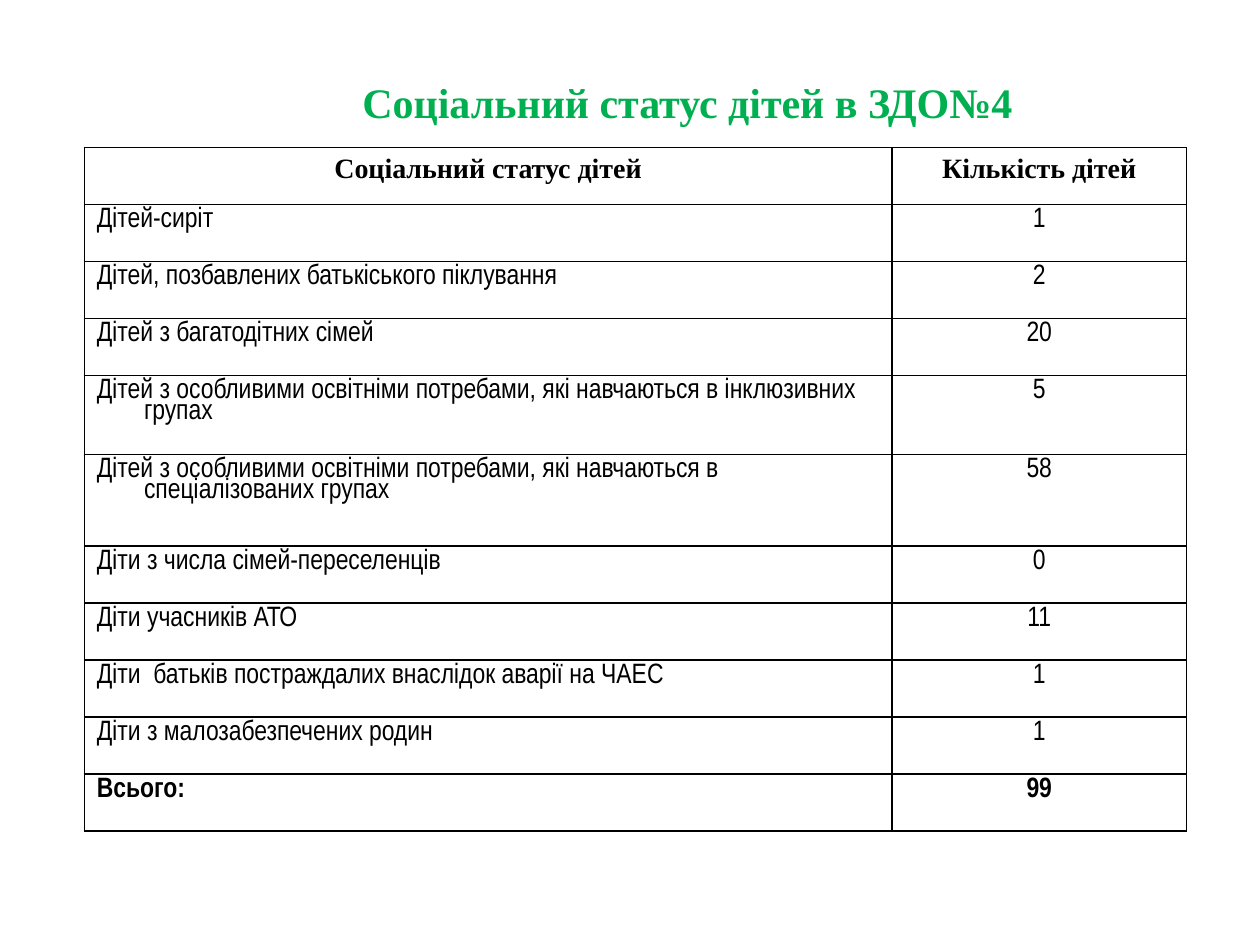
from dataclasses import dataclass

from lxml import etree
from pptx import Presentation
from pptx.dml.color import RGBColor
from pptx.enum.text import MSO_ANCHOR, PP_ALIGN
from pptx.oxml.ns import qn
from pptx.util import Cm, Pt

CENTER, LEFT = PP_ALIGN.CENTER, PP_ALIGN.LEFT
MIDDLE = MSO_ANCHOR.MIDDLE

TITLE = "Соціальний статус дітей в ЗДО№4"
HEADER = ("Соціальний статус дітей", "Кількість дітей")
GROUPS = [
    ("Дітей-сиріт", 1),
    ("Дітей, позбавлених батькіського піклування", 2),
    ("Дітей з багатодітних сімей", 20),
    ("Дітей з особливими освітніми потребами, які навчаються в інклюзивних групах", 5),
    ("Дітей з особливими освітніми потребами, які навчаються в спеціалізованих групах", 58),
    ("Діти з числа сімей-переселенців", 0),
    ("Діти учасників АТО", 11),
    ("Діти  батьків постраждалих внаслідок аварії на ЧАЕС", 1),
    ("Діти з малозабезпечених родин", 1),
]
TOTAL = ("Всього:", sum(count for _, count in GROUPS))

COLUMN_WIDTHS = (16.28, 5.94)
ROW_HEIGHT = 1.15
TALL_ROWS = {4: 1.6, 5: 1.84}
HANGING_INDENT = 0.95


@dataclass(frozen=True)
class Theme:
    heading_font: str = "Times New Roman"
    body_font: str = "Arial Narrow"
    title_size: int = 24
    table_size: int = 16
    title_color: str = "00B050"
    ink: str = "000000"
    paper: str = "FFFFFF"
    body_spacing: float = 0.8


THEME = Theme()


def add_span(para, text, font, size, color, bold):
    span = para.add_run()
    span.text = text
    span.font.name = font
    span.font.size = Pt(size)
    span.font.bold = bold
    span.font.color.rgb = RGBColor.from_string(color)


def add_title(page):
    box = page.shapes.add_textbox(Cm(3.38), Cm(1.07), Cm(20.96), Cm(1.98))
    frame = box.text_frame
    frame.word_wrap = True
    frame.vertical_anchor = MIDDLE
    para = frame.paragraphs[0]
    para.alignment = CENTER
    add_span(para, TITLE, THEME.heading_font, THEME.title_size, THEME.title_color, True)


def draw_borders(cell):
    """Put a 1 pt line on all four sides, ahead of the cell's fill."""
    properties = cell._tc.get_or_add_tcPr()
    for position, side in enumerate(("a:lnL", "a:lnR", "a:lnT", "a:lnB")):
        line = etree.Element(qn(side), w=str(Pt(1)))
        fill = etree.SubElement(line, qn("a:solidFill"))
        etree.SubElement(fill, qn("a:srgbClr"), val=THEME.ink)
        properties.insert(position, line)


def fill_cell(cell, text, alignment, font, bold, spacing):
    cell.fill.solid()
    cell.fill.fore_color.rgb = RGBColor.from_string(THEME.paper)
    draw_borders(cell)
    para = cell.text_frame.paragraphs[0]
    para.alignment = alignment
    para.line_spacing = spacing
    indents = para._p.get_or_add_pPr()
    indents.set("marL", str(Cm(HANGING_INDENT)))
    indents.set("indent", str(-Cm(HANGING_INDENT)))
    add_span(para, text, font, THEME.table_size, THEME.ink, bold)


def add_status_table(page):
    rows = [HEADER, *GROUPS, TOTAL]
    heights = [TALL_ROWS.get(index, ROW_HEIGHT) for index in range(len(rows))]
    table = page.shapes.add_table(
        len(rows), len(COLUMN_WIDTHS), Cm(1.7), Cm(2.97),
        Cm(sum(COLUMN_WIDTHS)), Cm(sum(heights)),
    ).table
    for column, width in zip(table.columns, COLUMN_WIDTHS):
        column.width = Cm(width)
    for index, (values, height) in enumerate(zip(rows, heights)):
        table.rows[index].height = Cm(height)
        is_header = values is HEADER
        font = THEME.heading_font if is_header else THEME.body_font
        spacing = 1.0 if is_header else THEME.body_spacing
        bold = is_header or values is TOTAL
        alignments = (CENTER if is_header else LEFT, CENTER)
        for cell, value, alignment in zip(table.rows[index].cells, values, alignments):
            fill_cell(cell, str(value), alignment, font, bold, spacing)


def main():
    deck = Presentation()
    deck.slide_width, deck.slide_height = Cm(25.4), Cm(19.05)
    page = deck.slides.add_slide(deck.slide_layouts[6])
    add_title(page)
    add_status_table(page)
    deck.save("out.pptx")


if __name__ == "__main__":
    main()
